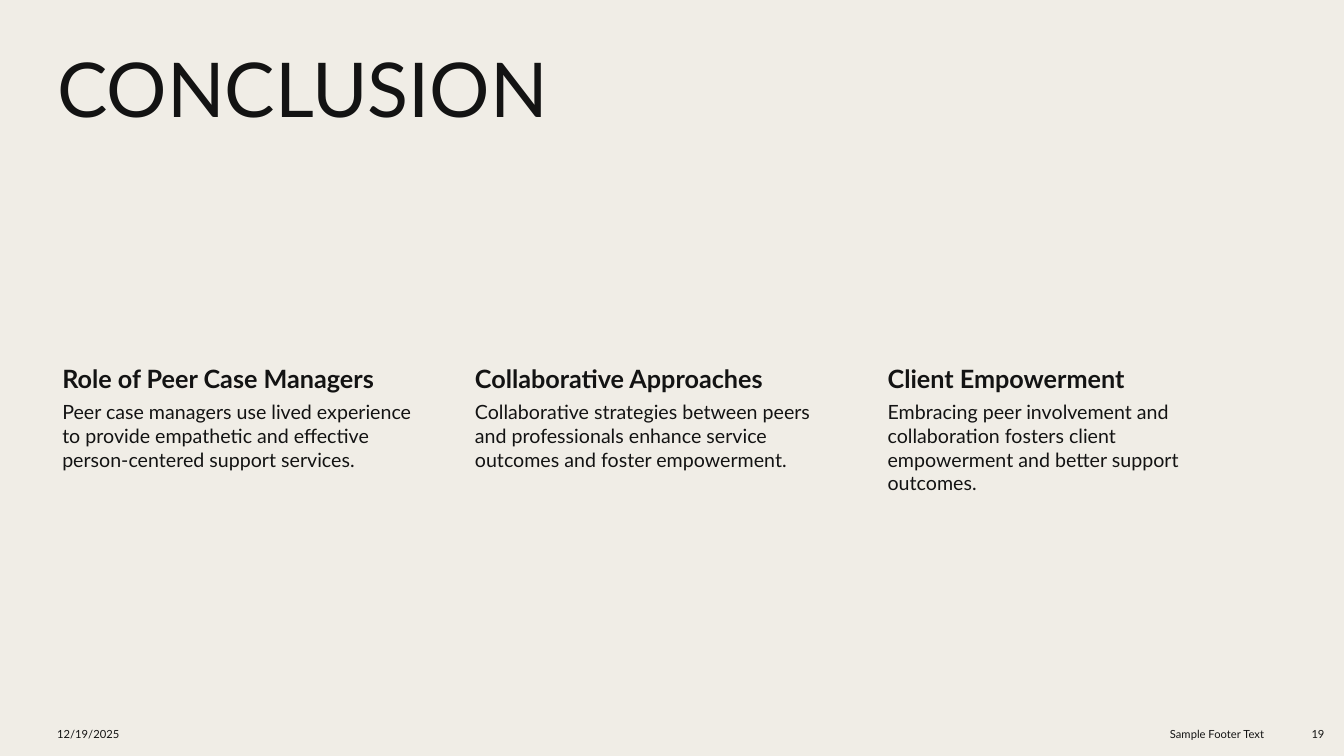
from dataclasses import dataclass

from pptx import Presentation
from pptx.dml.color import RGBColor
from pptx.enum.text import MSO_ANCHOR, PP_ALIGN
from pptx.util import Cm, Pt


@dataclass(frozen=True)
class Theme:
    font: str = "Lato"
    ink: RGBColor = RGBColor(0x13, 0x13, 0x13)
    paper: RGBColor = RGBColor(0xF0, 0xED, 0xE6)
    title_size: float = 54
    heading_size: float = 18
    body_size: float = 14
    footer_size: float = 8


THEME = Theme()

TAKEAWAYS = [
    ("Role of Peer Case Managers",
     "Peer case managers use lived experience to provide empathetic "
     "and effective person-centered support services."),
    ("Collaborative Approaches",
     "Collaborative strategies between peers and professionals enhance "
     "service outcomes and foster empowerment."),
    ("Client Empowerment",
     "Embracing peer involvement and collaboration fosters client "
     "empowerment and better support outcomes."),
]


def add_text(slide, text, box, *, size, bold=False, align=PP_ALIGN.LEFT,
             anchor=MSO_ANCHOR.TOP, insets=(0.25, 0.13, 0.25, 0.13),
             line_spacing=1.0, space_after=0):
    """Place text in box (left, top, width, height); all lengths in cm."""
    frame = slide.shapes.add_textbox(*map(Cm, box)).text_frame
    frame.word_wrap = True
    frame.vertical_anchor = anchor
    (frame.margin_left, frame.margin_top,
     frame.margin_right, frame.margin_bottom) = map(Cm, insets)
    paragraph = frame.paragraphs[0]
    paragraph.alignment = align
    paragraph.line_spacing = line_spacing
    paragraph.space_after = Pt(space_after)
    run = paragraph.add_run()
    run.text = text
    run.font.name = THEME.font
    run.font.size = Pt(size)
    run.font.bold = bold
    run.font.color.rgb = THEME.ink


def add_takeaway(slide, heading, body, box):
    """Bold heading on top, explanation in the rest of the box."""
    left, top, width, height = box
    heading_height = 0.97
    add_text(slide, heading, (left, top, width, heading_height),
             size=THEME.heading_size, bold=True,
             insets=(0.38, 0.08, 0.08, 0.08))
    add_text(slide, body,
             (left, top + heading_height, width, height - heading_height),
             size=THEME.body_size, insets=(0.38, 0.05, 0.05, 0.05))


def add_takeaways(slide, box):
    """Equal columns spread over the full width of the box."""
    left, top, width, height = box
    column_width = 9.45
    pitch = (width - column_width) / (len(TAKEAWAYS) - 1)
    for index, (heading, body) in enumerate(TAKEAWAYS):
        add_takeaway(slide, heading, body,
                     (left + index * pitch, top, column_width, height))


def add_footer(slide, box):
    """Date at the left, footer text and page number at the right."""
    left, top, width, height = box
    right = left + width
    entries = [
        ("12/19/2025", left, 7.9, PP_ALIGN.LEFT),
        ("Sample Footer Text", right - 8.92, 7.4, PP_ALIGN.RIGHT),
        ("19", right - 1.27, 1.27, PP_ALIGN.RIGHT),
    ]
    for text, entry_left, entry_width, align in entries:
        add_text(slide, text, (entry_left, top, entry_width, height),
                 size=THEME.footer_size, align=align,
                 anchor=MSO_ANCHOR.MIDDLE, space_after=6)


def build_conclusion(slide, box):
    left, top, width, height = box
    content_width = 30.25

    # Background
    slide.background.fill.solid()
    slide.background.fill.fore_color.rgb = THEME.paper

    # Title
    add_text(slide, "CONCLUSION", (left, top, content_width, 4.52),
             size=THEME.title_size, line_spacing=0.9)

    # Takeaway columns
    add_takeaways(slide, (left, top + 7.88, content_width, 7.7))

    # Footer
    footer_height = 0.94
    add_footer(slide, (left, top + height - footer_height, width, footer_height))


def main():
    deck = Presentation()
    deck.slide_width, deck.slide_height = Cm(33.87), Cm(19.05)
    slide = deck.slides.add_slide(deck.slide_layouts[6])
    build_conclusion(slide, (1.19, 1.19, 32.44, 17.78))
    deck.save("out.pptx")


if __name__ == "__main__":
    main()
